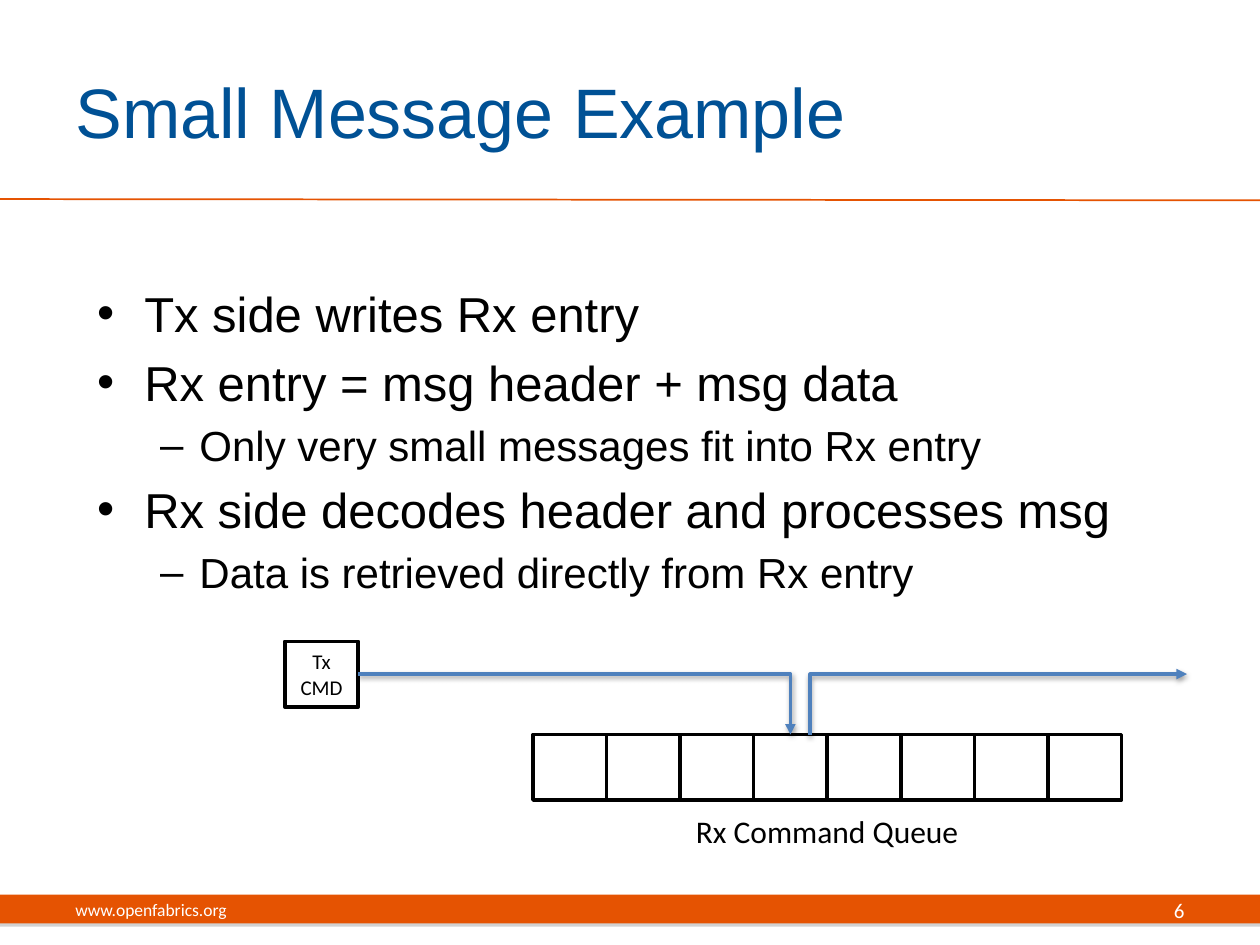
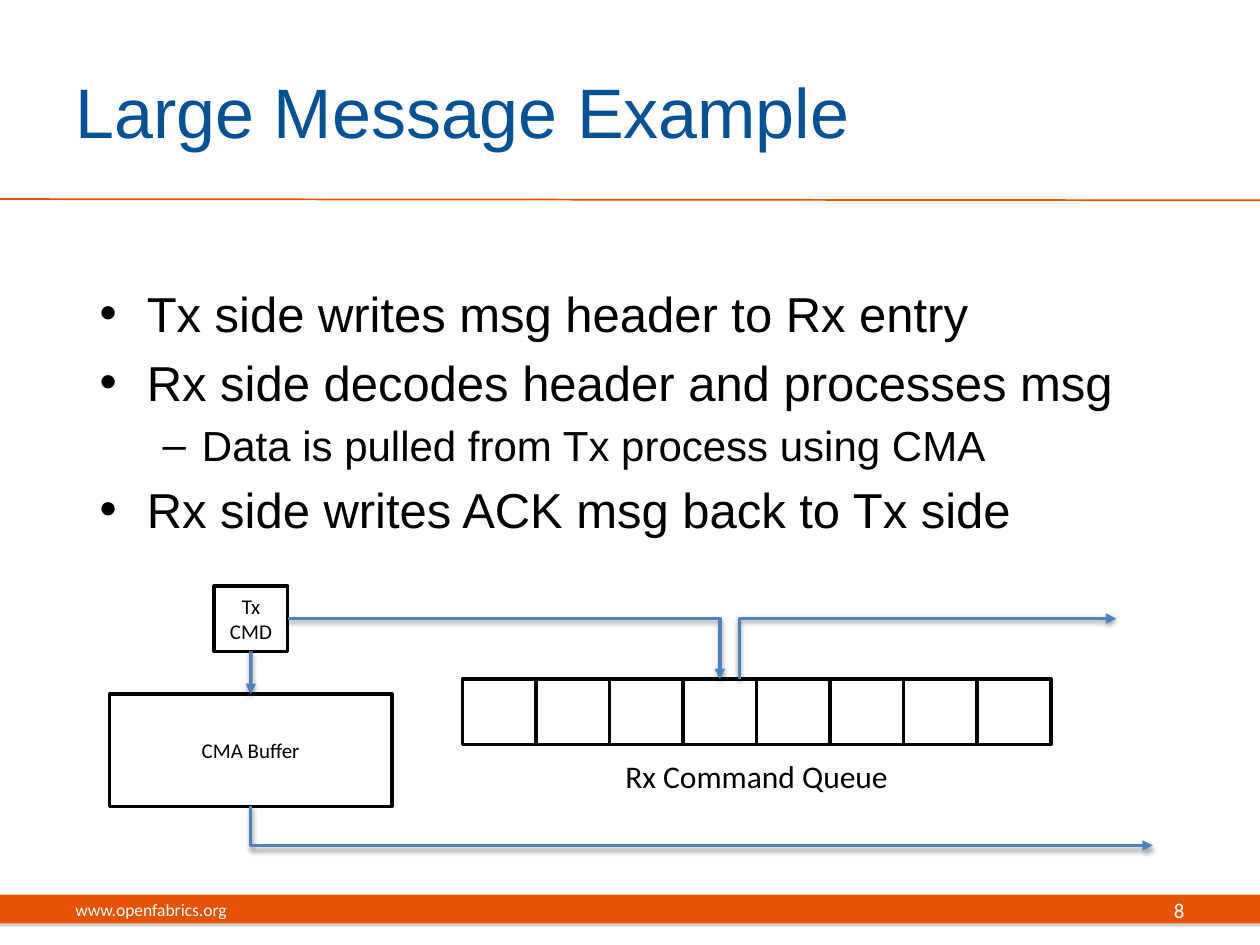
"""Build two slides on message passing through a command queue."""
from lxml import etree
from pptx import Presentation
from pptx.dml.color import RGBColor
from pptx.enum.shapes import MSO_CONNECTOR, MSO_SHAPE
from pptx.enum.text import MSO_ANCHOR, PP_ALIGN
from pptx.oxml.ns import qn
from pptx.util import Inches, Pt

BLUE = RGBColor(0x00, 0x51, 0x95)
ORANGE = RGBColor(0xE5, 0x53, 0x02)
STEEL = RGBColor(0x4F, 0x81, 0xBD)
GREY = RGBColor(0x80, 0x80, 0x80)
BLACK = RGBColor(0, 0, 0)
WHITE = RGBColor(0xFF, 0xFF, 0xFF)
RECT = MSO_SHAPE.RECTANGLE
STRAIGHT, ELBOW = MSO_CONNECTOR.STRAIGHT, MSO_CONNECTOR.ELBOW
LEFT, CENTER, RIGHT = PP_ALIGN.LEFT, PP_ALIGN.CENTER, PP_ALIGN.RIGHT
MIDDLE = MSO_ANCHOR.MIDDLE
TOP_SIDE, BOTTOM_SIDE, RIGHT_SIDE = 0, 2, 3
CELLS, CELL_W, CELL_H = 8, 4.67 / 8, 0.52

SMALL = [
    (0, "Tx side writes Rx entry"),
    (0, "Rx entry = msg header + msg data"),
    (1, "Only very small messages fit into Rx entry"),
    (0, "Rx side decodes header and processes msg"),
    (1, "Data is retrieved directly from Rx entry"),
]
LARGE = [
    (0, "Tx side writes msg header to Rx entry"),
    (0, "Rx side decodes header and processes msg"),
    (1, "Data is pulled from Tx process using CMA"),
    (0, "Rx side writes ACK msg back to Tx side"),
]


def place(shape, x, y, w, h):
    """Set a shape's position and size in inches."""
    shape.left, shape.top = Inches(x), Inches(y)
    shape.width, shape.height = Inches(w), Inches(h)


def style(para, size, color, font="Calibri", align=LEFT):
    """Set the font and alignment of a paragraph."""
    para.alignment = align
    para.font.name = font
    para.font.size = Pt(size)
    para.font.color.rgb = color


def shade(shape, color, alpha, blur, dist):
    """Give a shape or connector a shadow that falls straight down."""
    props = shape._element.spPr
    for old in props.findall(qn("a:effectLst")):
        props.remove(old)
    effects = etree.SubElement(props, qn("a:effectLst"))
    outer = etree.SubElement(
        effects, qn("a:outerShdw"), blurRad=str(Pt(blur)), dist=str(Pt(dist)),
        dir="5400000", rotWithShape="0")
    tint = etree.SubElement(outer, qn("a:srgbClr"), val=str(color))
    etree.SubElement(tint, qn("a:alpha"), val=str(alpha * 1000))


def box(slide, x, y, w, h, text="", size=12, fill=WHITE, edge=BLACK):
    """Add a filled rectangle with optional centred text."""
    shape = slide.shapes.add_shape(
        RECT, Inches(x), Inches(y), Inches(w), Inches(h))
    shape.shadow.inherit = False
    shape.fill.solid()
    shape.fill.fore_color.rgb = fill
    if edge is None:
        shape.line.fill.background()
    else:
        shape.line.color.rgb = edge
        shape.line.width = Pt(2)
    if text:
        frame = shape.text_frame
        frame.word_wrap = True
        frame.vertical_anchor = MIDDLE
        frame.text = text
        style(frame.paragraphs[0], size, BLACK, align=CENTER)
    return shape


def label(slide, x, w, text, size, align):
    """Add a white footer label."""
    frame = slide.shapes.add_textbox(
        Inches(x), Inches(7.02), Inches(w), Inches(0.4)).text_frame
    frame.word_wrap = True
    frame.vertical_anchor = MIDDLE
    frame.text = text
    style(frame.paragraphs[0], size, WHITE, align=align)


def arrow(slide, kind, x1=0, y1=0, x2=0, y2=0, start=None, end=None):
    """Add an arrow; start and end are (shape, side) pairs to join."""
    line = slide.shapes.add_connector(
        kind, Inches(x1), Inches(y1), Inches(x2), Inches(y2))
    if start:
        line.begin_connect(*start)
    if end:
        line.end_connect(*end)
    line.line.color.rgb = STEEL
    line.line.width = Pt(2)
    etree.SubElement(line.line._get_or_add_ln(), qn("a:tailEnd"), type="triangle")
    shade(line, BLACK, 38, 3.1, 1.6)
    if kind == ELBOW:
        line._element.spPr.find(qn("a:prstGeom")).set("prst", "bentConnector2")
    return line


def rise(slide, x1, y1, x2, y2, start=None):
    """Add an arrow that runs up or down first and then to the right."""
    line = arrow(slide, ELBOW, x1, y1, x2, y2, start)
    wide, high = x2 - x1, abs(y2 - y1)
    place(line, (x1 + x2 - high) / 2, (y1 + y2 - wide) / 2, high, wide)
    frame = line._element.spPr.find(qn("a:xfrm"))
    up = y2 < y1
    frame.set("rot", "5400000" if up else "16200000")
    frame.set("flipH", "1")
    frame.set("flipV", "1" if up else "0")


def base(deck, title, items, left, number):
    """Add a slide with its title, list, rule and footer."""
    slide = deck.slides.add_slide(deck.slide_layouts[1])
    band = box(slide, 0, 7.1, 10, 0.23, fill=ORANGE, edge=None)
    shade(band, GREY, 35, 0, 1.8)
    rule = slide.shapes.add_connector(
        STRAIGHT, 0, Inches(1.58), Inches(10), Inches(1.59))
    rule.line.color.rgb = ORANGE
    rule.line.width = Pt(1)
    etree.SubElement(rule._element.spPr, qn("a:effectLst"))

    head = slide.shapes.title
    place(head, 0.5, 0.25, 8.17, 1.25)
    head.text_frame.vertical_anchor = MIDDLE
    head.text_frame.text = title
    style(head.text_frame.paragraphs[0], 40, BLUE, "Arial")

    body = slide.placeholders[1]
    place(body, left, 2.2, 9, 5.05)
    frame = body.text_frame
    for i, (level, text) in enumerate(items):
        para = frame.add_paragraph() if i else frame.paragraphs[0]
        para.text = text
        para.level = level
        style(para, 24 if level else 28, BLACK, "Arial")
    frame.paragraphs[0].space_before = Pt(0)

    label(slide, 0.5, 3.17, "www.openfabrics.org", 10, LEFT)
    label(slide, 7.17, 2.33, number, 12, RIGHT)
    return slide


def queue(slide, x, y):
    """Draw the queue at x, y with its command and arrows; return the command."""
    cells = [box(slide, x + i * CELL_W, y, CELL_W, CELL_H) for i in range(CELLS)]
    box(slide, x, y + 0.59, CELLS * CELL_W, 0.35, "Rx Command Queue", 18, edge=None)
    cmd = box(slide, x - 1.97, y - 0.74, CELL_W, CELL_H, "Tx CMD")
    arrow(slide, ELBOW, start=(cmd, RIGHT_SIDE), end=(cells[3], TOP_SIDE))
    rise(slide, x + 2.2, y, x + 5.19, y - 0.48)
    return cmd


def main():
    """Build and save the deck."""
    deck = Presentation()
    deck.slide_width, deck.slide_height = Inches(10), Inches(7.5)

    small = base(deck, "Small Message Example", SMALL, 0.67, "6")
    queue(small, 4.23, 5.83)

    large = base(deck, "Large Message Example", LARGE, 0.69, "8")
    cmd = queue(large, 3.67, 5.39)
    store = box(large, 0.87, 5.51, 2.24, 0.89, "CMA Buffer")
    arrow(large, STRAIGHT, start=(cmd, BOTTOM_SIDE), end=(store, TOP_SIDE))
    rise(large, 1.99, 6.4, 9.15, 6.71, (store, BOTTOM_SIDE))

    deck.save("out.pptx")


if __name__ == "__main__":
    main()
